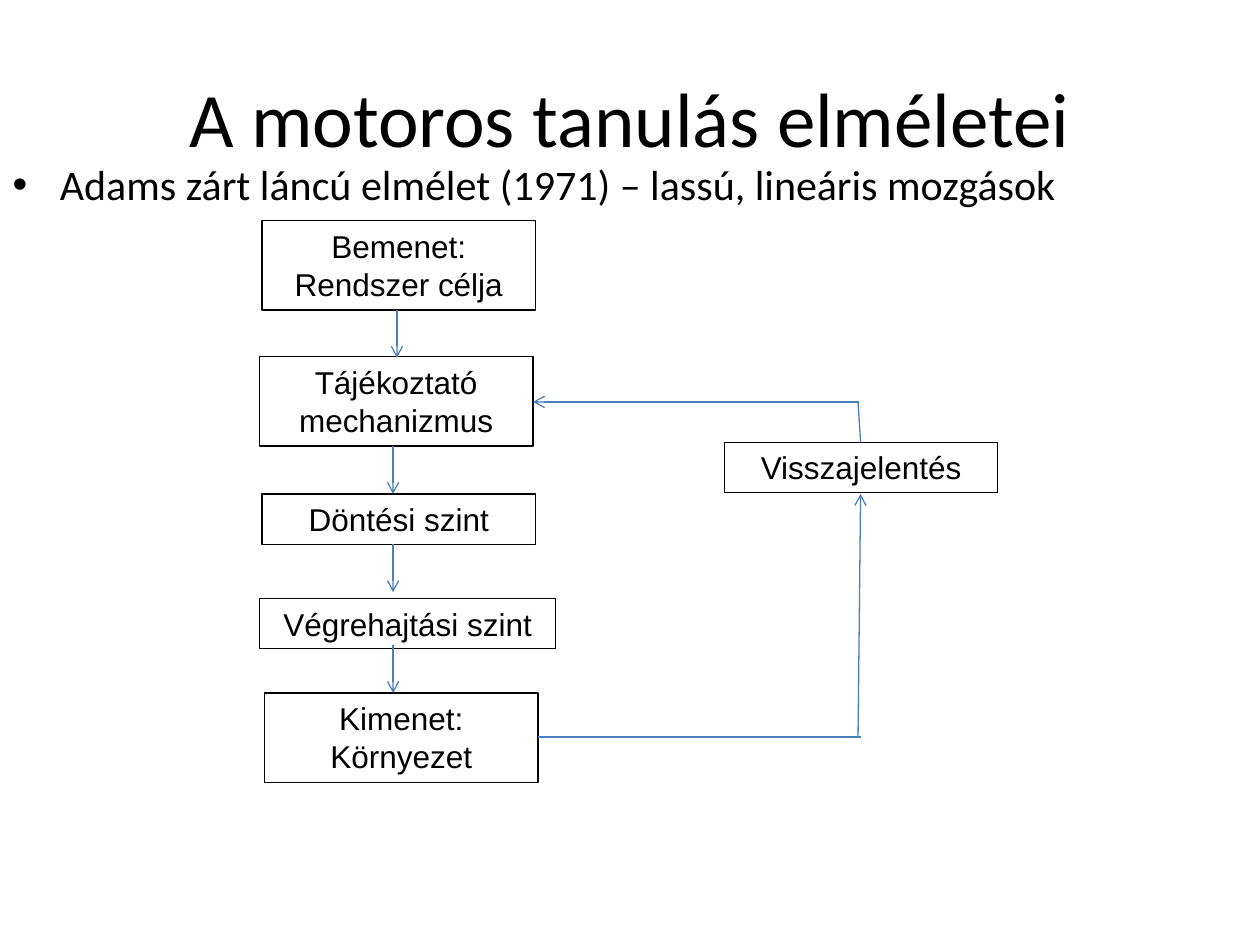
from lxml import etree
from pptx import Presentation
from pptx.dml.color import RGBColor
from pptx.enum.shapes import MSO_CONNECTOR, MSO_SHAPE
from pptx.enum.text import MSO_ANCHOR, MSO_AUTO_SIZE, PP_ALIGN
from pptx.oxml.ns import qn
from pptx.util import Inches, Pt

BLACK = RGBColor(0x00, 0x00, 0x00)
BLUE = RGBColor(0x4B, 0x7E, 0xBC)
SINGLE, DOUBLE = 0.4, 0.71
BOX_WIDTH = 2.17

BOXES = [
    ("Bemenet:\nRendszer célja", 2.08, 1.75, BOX_WIDTH, DOUBLE),
    ("Tájékoztató mechanizmus", 2.06, 2.83, BOX_WIDTH, DOUBLE),
    ("Döntési szint", 2.08, 3.92, BOX_WIDTH, SINGLE),
    ("Végrehajtási szint", 2.06, 4.75, 2.35, SINGLE),
    ("Kimenet:\nKörnyezet", 2.1, 5.5, BOX_WIDTH, DOUBLE),
    ("Visszajelentés", 5.75, 3.51, BOX_WIDTH, SINGLE),
]
DOWN_ARROWS = [(3.15, 2.46), (3.12, 3.54), (3.12, 4.32), (3.12, 5.12)]
ARROW_LENGTH = 0.38
FEEDBACK_LINES = [
    ((4.27, 5.85), (6.83, 5.85), False),
    ((6.81, 5.85), (6.83, 3.92), True),
    ((6.83, 3.51), (6.81, 3.19), False),
    ((6.82, 3.19), (4.23, 3.19), True),
]


def write_text(text_frame, text, font="Arial", size=18, color=BLACK,
               align=PP_ALIGN.CENTER, anchor=MSO_ANCHOR.TOP,
               auto_size=MSO_AUTO_SIZE.NONE, line_spacing=None):
    text_frame.word_wrap = True
    text_frame.auto_size = auto_size
    text_frame.vertical_anchor = anchor
    paragraph = text_frame.paragraphs[0]
    paragraph.text = text
    paragraph.alignment = align
    paragraph.space_before = Pt(0)
    paragraph.line_spacing = line_spacing
    for run in paragraph.runs:
        run.font.name = font
        run.font.size = Pt(size)
        run.font.color.rgb = color


class FlowSlide:
    heading_font = "Calibri"
    line_width = Pt(0.75)

    def __init__(self, slide):
        self.slide = slide

    def placeholder(self, index, text, left, top, width, height, **text_format):
        shape = self.slide.placeholders[index]
        shape.left, shape.top = Inches(left), Inches(top)
        shape.width, shape.height = Inches(width), Inches(height)
        write_text(shape.text_frame, text, font=self.heading_font, **text_format)

    def box(self, text, left, top, width, height):
        shape = self.slide.shapes.add_shape(
            MSO_SHAPE.RECTANGLE, Inches(left), Inches(top), Inches(width), Inches(height))
        shape.shadow.inherit = False
        shape.fill.background()
        shape.line.color.rgb = BLACK
        shape.line.width = self.line_width
        write_text(shape.text_frame, text, auto_size=MSO_AUTO_SIZE.SHAPE_TO_FIT_TEXT)

    def line(self, start, end, arrow=True):
        connector = self.slide.shapes.add_connector(
            MSO_CONNECTOR.STRAIGHT, *map(Inches, start + end))
        connector.line.color.rgb = BLUE
        connector.line.width = self.line_width
        if arrow:
            line_element = connector.line._get_or_add_ln()
            etree.SubElement(line_element, qn("a:tailEnd"), type="arrow")
        etree.SubElement(connector._element.spPr, qn("a:effectLst"))


def main():
    presentation = Presentation()
    presentation.slide_width, presentation.slide_height = Inches(10), Inches(7.5)
    flow = FlowSlide(presentation.slides.add_slide(presentation.slide_layouts[1]))

    flow.placeholder(0, "A motoros tanulás elméletei", 0.5, 0.3, 9, 1.25,
                     size=44, anchor=MSO_ANCHOR.MIDDLE)
    flow.placeholder(1, "Adams zárt láncú elmélet (1971) – lassú, lineáris mozgások",
                     0, 1.25, 9.83, 5.17, size=24, align=PP_ALIGN.LEFT, line_spacing=0.9)
    for box in BOXES:
        flow.box(*box)
    for left, top in DOWN_ARROWS:
        flow.line((left, top), (left, top + ARROW_LENGTH))
    for start, end, arrow in FEEDBACK_LINES:
        flow.line(start, end, arrow)

    presentation.save("out.pptx")


if __name__ == "__main__":
    main()
